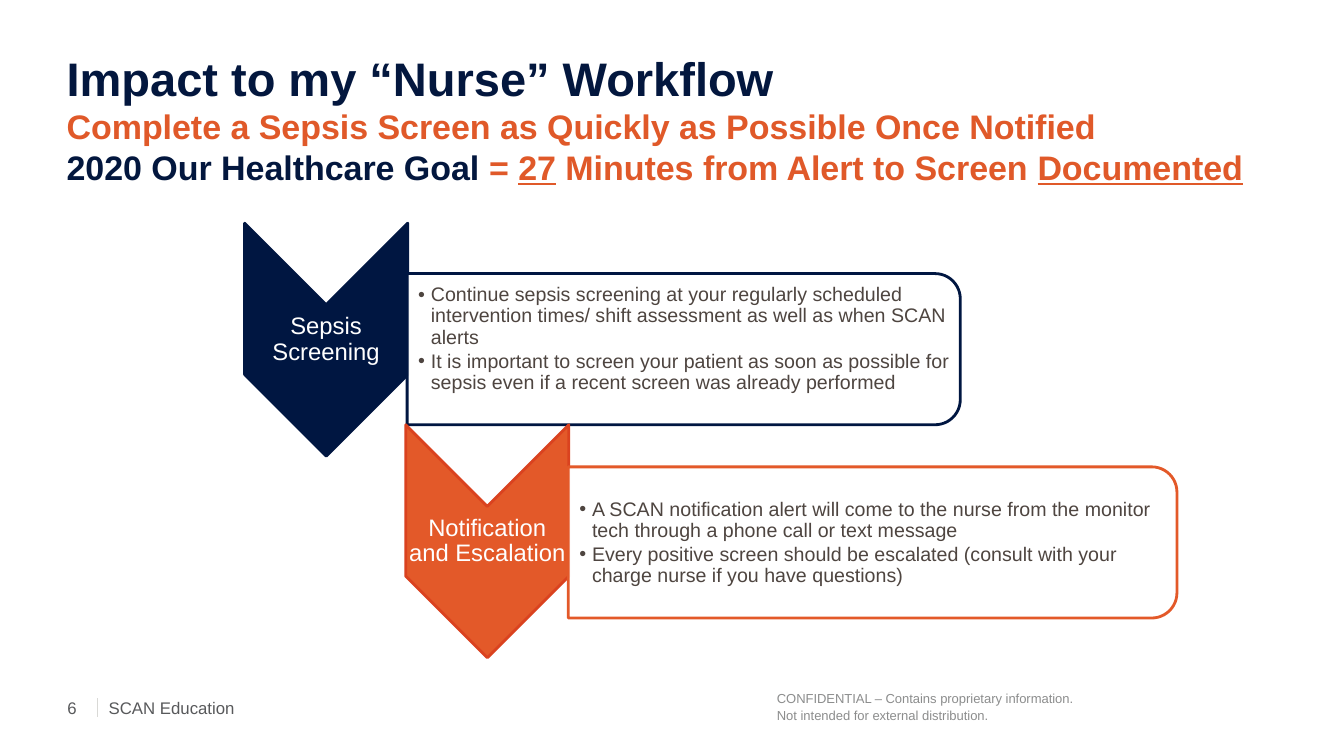
from lxml import etree
from pptx import Presentation
from pptx.dml.color import RGBColor
from pptx.enum.shapes import MSO_CONNECTOR, MSO_SHAPE
from pptx.enum.text import MSO_ANCHOR, PP_ALIGN
from pptx.oxml.ns import qn
from pptx.util import Cm, Pt

CHEVRON, PANEL = MSO_SHAPE.CHEVRON, MSO_SHAPE.ROUND_2_SAME_RECTANGLE
STRAIGHT = MSO_CONNECTOR.STRAIGHT
TOP, MIDDLE, BOTTOM = MSO_ANCHOR.TOP, MSO_ANCHOR.MIDDLE, MSO_ANCHOR.BOTTOM
CENTER = PP_ALIGN.CENTER
NAVY = RGBColor(0x03, 0x17, 0x3E)
DEEP_NAVY = RGBColor(0x00, 0x16, 0x41)
TITLE_ORANGE = RGBColor(0xE0, 0x59, 0x29)
ORANGE = RGBColor(0xE3, 0x59, 0x29)
RED = RGBColor(0xDA, 0x42, 0x1F)
WHITE = RGBColor(0xFF, 0xFF, 0xFF)
BROWN = RGBColor(0x4E, 0x45, 0x40)
GRAY = RGBColor(0x58, 0x59, 0x5B)
LIGHT_GRAY = RGBColor(0x8C, 0x8D, 0x8D)
RULE_GRAY = RGBColor(0xD9, 0xD9, 0xD6)

HEADLINE = {"size": Pt(33.6), "bold": True, "color": NAVY}
SUBHEAD = {"size": Pt(24.3), "bold": True, "color": TITLE_ORANGE}
SUBHEAD_NAVY = {**SUBHEAD, "color": NAVY}
UNDERLINED = {**SUBHEAD, "underline": True}
LABEL = {"size": Pt(17), "color": WHITE}
BODY = {"size": Pt(14), "color": BROWN}
FOOTER = {"size": Pt(12), "color": GRAY}
NOTICE = {"size": Pt(9.3), "color": LIGHT_GRAY}

TITLE = [
    [("Impact to my “Nurse” Workflow", HEADLINE)],
    [("Complete a Sepsis Screen as Quickly as Possible Once Notified", SUBHEAD)],
    [("2020 Our Healthcare Goal ", SUBHEAD_NAVY), ("= ", SUBHEAD), ("27", UNDERLINED),
     (" Minutes from Alert to Screen ", SUBHEAD), ("Documented", UNDERLINED)],
]
STEPS = [
    {"label": "Sepsis Screening", "fill": DEEP_NAVY, "edge": DEEP_NAVY,
     "center": (8.22, 8.56), "panel_y": 8.8, "panel_width": 13.94, "text_y": 8.55,
     "bullets": [
         "Continue sepsis screening at your regularly scheduled intervention times/ "
         "shift assessment as well as when SCAN alerts",
         "It is important to screen your patient as soon as possible for sepsis even "
         "if a recent screen was already performed"]},
    {"label": "Notification and Escalation", "fill": ORANGE, "edge": RED,
     "center": (12.28, 13.64), "panel_y": 13.67, "panel_width": 15.34, "text_y": 13.69,
     "bullets": [
         "A SCAN notification alert will come to the nurse from the monitor tech "
         "through a phone call or text message",
         "Every positive screen should be escalated (consult with your charge nurse "
         "if you have questions)"]},
]
CONFIDENTIAL = ["CONFIDENTIAL – Contains proprietary information.",
                "Not intended for external distribution."]
PAGE_NUMBER, SECTION = "6", "SCAN Education"

CHEVRON_LENGTH, CHEVRON_WIDTH, PANEL_HEIGHT = 5.87, 4.11, 3.81
PANEL_OFFSET, LABEL_HEIGHT, TEXT_HEIGHT = 2.04, 1.75, 2.9


def add_text(page, place, lines, anchor=MIDDLE, margins=(0, 0, 0, 0), wrap=True,
             bullet=False, **layout):
    frame = page.shapes.add_textbox(*map(Cm, place)).text_frame
    sides = ("margin_left", "margin_top", "margin_right", "margin_bottom")
    settings = {**dict(zip(sides, map(Cm, margins))),
                "word_wrap": wrap, "vertical_anchor": anchor}
    for name, value in settings.items():
        setattr(frame, name, value)
    for index, spans in enumerate(lines):
        para = frame.add_paragraph() if index else frame.paragraphs[0]
        for name, value in layout.items():
            setattr(para, name, value)
        if bullet:
            properties = para._p.get_or_add_pPr()
            properties.set("marL", str(Cm(0.32)))
            properties.set("indent", str(-Cm(0.32)))
            etree.SubElement(properties, qn("a:buFont")).set("typeface", "Arial")
            etree.SubElement(properties, qn("a:buChar")).set("char", "•")
        for text, style in spans:
            span = para.add_run()
            span.text = text
            span.font.name = "Arial"
            for name, value in style.items():
                if name == "color":
                    span.font.color.rgb = value
                else:
                    setattr(span.font, name, value)


def add_turned_shape(page, kind, center, length, width, fill, edge):
    x, y = center
    shape = page.shapes.add_shape(kind, Cm(x - length / 2), Cm(y - width / 2),
                                  Cm(length), Cm(width))
    shape.rotation = 90
    shape.shadow.inherit = False
    shape.fill.solid()
    shape.fill.fore_color.rgb = fill
    shape.line.color.rgb = edge
    shape.line.width = Pt(2)
    return shape


def add_step(page, step):
    x, y = step["center"]
    left, width = x + PANEL_OFFSET, step["panel_width"]
    add_turned_shape(page, CHEVRON, (x, y), CHEVRON_LENGTH, CHEVRON_WIDTH,
                     step["fill"], step["edge"])
    add_text(page, (x - CHEVRON_WIDTH / 2, y - LABEL_HEIGHT / 2, CHEVRON_WIDTH, LABEL_HEIGHT),
             [[(step["label"], LABEL)]], margins=(0.03,) * 4,
             alignment=CENTER, line_spacing=0.9)
    panel = add_turned_shape(page, PANEL, (left + width / 2, step["panel_y"]),
                             PANEL_HEIGHT, width, WHITE, step["fill"])
    color = panel.fill._xPr.find(qn("a:solidFill"))[0]
    etree.SubElement(color, qn("a:alpha")).set("val", "90000")
    add_text(page, (left, step["text_y"] - TEXT_HEIGHT / 2, width - 0.18, TEXT_HEIGHT),
             [[(text, BODY)] for text in step["bullets"]],
             margins=(0.28, 0.03, 0.03, 0.03), bullet=True,
             line_spacing=0.9, space_after=Pt(2.1))


def add_footer(page):
    rule = page.shapes.add_connector(STRAIGHT, Cm(2.46), Cm(17.6), Cm(2.46), Cm(18.06))
    rule.line.color.rgb = RULE_GRAY
    rule.line.width = Pt(0.75)
    etree.SubElement(rule._element.spPr, qn("a:effectLst"))
    add_text(page, (19.58, 17.35, 8.71, 0.91), [[(line, NOTICE)] for line in CONFIDENTIAL],
             anchor=TOP, line_spacing=1.1)
    for left, width, text in ((1.7, 0.91, PAGE_NUMBER), (2.74, 12.55, SECTION)):
        add_text(page, (left, 17.5, width, 0.69), [[(text, FOOTER)]],
                 margins=(0, 0.13, 0, 0.13))


def main():
    deck = Presentation()
    deck.slide_width, deck.slide_height = Cm(33.87), Cm(19.05)
    page = deck.slides.add_slide(deck.slide_layouts[6])
    add_text(page, (1.68, 1.72, 30.48, 3), TITLE, anchor=BOTTOM, line_spacing=1.0)
    for step in STEPS:
        add_step(page, step)
    add_footer(page)
    deck.save("out.pptx")


if __name__ == "__main__":
    main()
